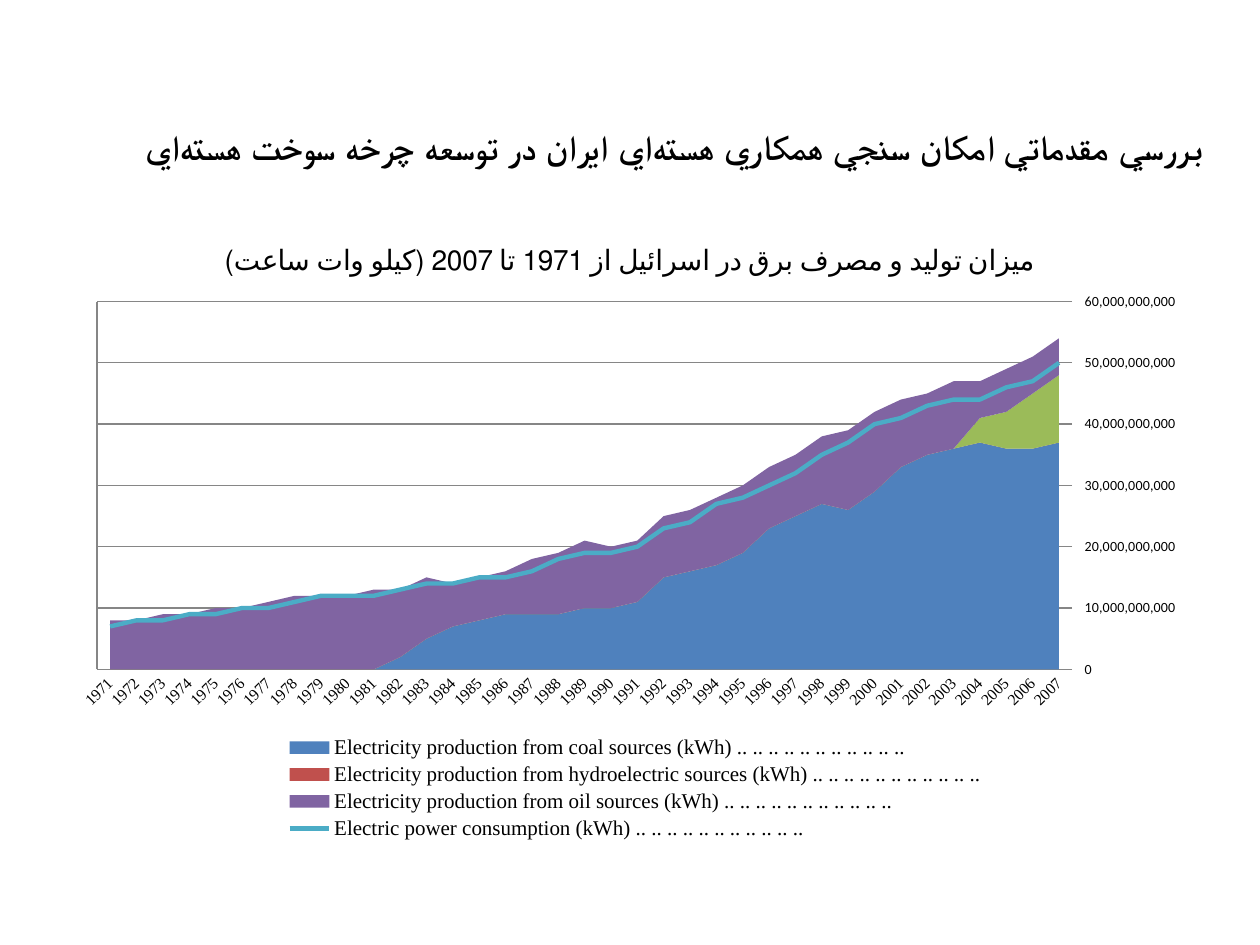
from pptx import Presentation
from pptx.chart.data import CategoryChartData
from pptx.dml.color import RGBColor
from pptx.enum.chart import XL_CHART_TYPE, XL_LEGEND_POSITION, XL_TICK_LABEL_POSITION, XL_TICK_MARK
from pptx.enum.text import MSO_ANCHOR, MSO_AUTO_SIZE, PP_ALIGN
from pptx.oxml import parse_xml
from pptx.oxml.ns import nsdecls
from pptx.util import Inches, Pt

AREA_STACKED = XL_CHART_TYPE.AREA_STACKED
LEGEND_BOTTOM = XL_LEGEND_POSITION.BOTTOM
LABELS_HIGH = XL_TICK_LABEL_POSITION.HIGH
NO_TICKS = XL_TICK_MARK.NONE
MIDDLE = MSO_ANCHOR.MIDDLE
NO_AUTOFIT = MSO_AUTO_SIZE.NONE
CENTER = PP_ALIGN.CENTER

TITLE_ONLY_LAYOUT = 5
BILLION = 10 ** 9
YEARS = [str(year) for year in range(1971, 2008)]
DOTS = " .." * 11
NON_JOINER = chr(0x200C)
NUCLEAR = f"هسته{NON_JOINER}اي"
SLIDE_TITLE = f"بررسي مقدماتي امکان سنجي همکاري {NUCLEAR} ايران در توسعه چرخه سوخت {NUCLEAR}"
CHART_TITLE = "ميزان توليد و مصرف برق در اسرائيل از 1971 تا 2007 (کيلو وات ساعت)"
UNNAMED_SERIES = 2

# Name, colour, billions of kWh per year; the last series is drawn as a line.
SERIES = [
    ("Electricity production from coal sources (kWh)" + DOTS, "4F81BD",
     [0] * 11 + [2, 5, 7, 8, 9, 9, 9, 10, 10, 11, 15, 16, 17, 19, 23, 25, 27, 26,
                 29, 33, 35, 36, 37, 36, 36, 37]),
    ("Electricity production from hydroelectric sources (kWh)" + DOTS, "C0504D", [0] * 37),
    ("Series 3", "9BBB59", [0] * 33 + [4, 6, 9, 11]),
    ("Electricity production from oil sources (kWh)" + DOTS, "8064A2",
     [8, 8, 9, 9, 10, 10, 11, 12, 12, 12, 13, 11, 10, 7, 7, 7, 9, 10, 11, 10, 10, 10,
      10, 11, 11, 10, 10, 11, 13, 13, 11, 10, 11, 6, 7, 6, 6]),
    ("Electric power consumption (kWh)" + DOTS, "4BACC6",
     [7, 8, 8, 9, 9, 10, 10, 11, 12, 12, 12, 13, 14, 14, 15, 15, 16, 18, 19, 19, 20,
      23, 24, 27, 28, 30, 32, 35, 37, 40, 41, 43, 44, 44, 46, 47, 50]),
]


def color(hex_string):
    return RGBColor.from_string(hex_string)


def chart_xml(tag, content=""):
    return parse_xml(f"<c:{tag} {nsdecls('c')}>{content}</c:{tag}>")


def manual_layout(x, y, width, height, inner=False):
    """Give a chart layout in fractions of the chart's size."""
    target = '<c:layoutTarget val="inner"/>' if inner else ""
    return chart_xml("layout", f'<c:manualLayout>{target}<c:xMode val="edge"/><c:yMode val="edge"/>'
                     f'<c:x val="{x}"/><c:y val="{y}"/><c:w val="{width}"/><c:h val="{height}"/>'
                     '</c:manualLayout>')


class SlideBuilder:
    font_name = "Calibri"
    label_font = "Times New Roman"
    text_color = "000000"
    grid_color = "868686"

    def __init__(self, slide):
        self.slide = slide

    def style_font(self, font, size, name=None, bold=False):
        font.name = name or self.font_name
        font.size = Pt(size)
        font.bold = bold
        font.color.rgb = color(self.text_color)

    def add_rtl_run(self, paragraph, text, size, bold=False):
        paragraph.alignment = CENTER
        paragraph._p.get_or_add_pPr().set("rtl", "1")
        run = paragraph.add_run()
        run.text = text
        self.style_font(run.font, size, bold=bold)

    def add_title(self, text, left, top, width, height):
        title = self.slide.shapes.title
        title.left, title.top = Inches(left), Inches(top)
        title.width, title.height = Inches(width), Inches(height)
        frame = title.text_frame
        frame.auto_size = NO_AUTOFIT
        frame.word_wrap = True
        frame.vertical_anchor = MIDDLE
        frame.margin_bottom = Inches(0.4)
        paragraph = frame.paragraphs[0]
        paragraph.line_spacing = 0.8
        self.add_rtl_run(paragraph, text, 20, bold=True)

    def add_chart(self, left, top, width, height):
        data = CategoryChartData(number_format="#,##0")
        data.categories = YEARS
        for name, _, billions in SERIES:
            data.add_series(name, [value * BILLION for value in billions])
        chart = self.slide.shapes.add_chart(
            AREA_STACKED, Inches(left), Inches(top), Inches(width), Inches(height), data).chart
        self.style_font(chart.font, 10)
        chart.has_title = True
        self.add_rtl_run(chart.chart_title.text_frame.paragraphs[0], CHART_TITLE, 16)
        self.style_series(chart)
        self.style_axes(chart)
        self.style_legend(chart)

    def style_series(self, chart):
        plot = chart.plots[0]
        plot.vary_by_categories = False
        *areas, consumption = plot.series
        for series, (_, fill, _) in zip(areas, SERIES):
            series.format.fill.solid()
            series.format.fill.fore_color.rgb = color(fill)
        self.move_to_line_chart(chart, consumption)
        line_series = chart.plots[1].series[0]
        line_series.smooth = False
        line_series.format.line.color.rgb = color(SERIES[-1][1])
        line_series.format.line.width = Pt(2.5)

    def move_to_line_chart(self, chart, series):
        area_chart = chart.element.xpath("//c:areaChart")[0]
        line_chart = chart_xml("lineChart", '<c:grouping val="standard"/><c:varyColors val="0"/>'
                               '<c:marker val="1"/>')
        line_chart.insert(2, series._element)
        series._element.xpath("c:cat")[0].addprevious(
            chart_xml("marker", '<c:symbol val="none"/>'))
        for axis_id in area_chart.xpath("c:axId"):
            line_chart.append(chart_xml("axId"))
            line_chart[-1].set("val", axis_id.get("val"))
        area_chart.addnext(line_chart)

    def style_axes(self, chart):
        years, energy = chart.category_axis, chart.value_axis
        for axis, size, font_name in ((years, 9, self.label_font), (energy, 8, self.font_name)):
            axis.major_tick_mark = axis.minor_tick_mark = NO_TICKS
            axis.format.line.color.rgb = color(self.grid_color)
            self.style_font(axis.tick_labels.font, size, font_name)
        years.has_major_gridlines = False
        years._element.xpath("c:txPr/a:bodyPr")[0].set("rot", "-2700000")
        energy.minimum_scale, energy.maximum_scale = 0, 60 * BILLION
        energy.major_unit = 10 * BILLION
        energy.tick_label_position = LABELS_HIGH
        energy.tick_labels.number_format = "#,##0"
        energy.tick_labels.number_format_is_linked = False
        energy.major_gridlines.format.line.color.rgb = color(self.grid_color)
        for crossing in energy._element.xpath("c:crossBetween"):
            crossing.set("val", "between")
        plot_area = chart.element.xpath("//c:plotArea")[0]
        for layout in plot_area.xpath("c:layout"):
            plot_area.remove(layout)
        plot_area.insert(0, manual_layout(0.03, 0.13, 0.86, 0.59, inner=True))

    def style_legend(self, chart):
        chart.has_legend = True
        legend = chart.legend
        legend.position = LEGEND_BOTTOM
        legend.include_in_layout = False
        self.style_font(legend.font, 12, self.label_font)
        element = legend._element
        for layout in element.xpath("c:layout"):
            element.remove(layout)
        hidden_entry = chart_xml("legendEntry", f'<c:idx val="{UNNAMED_SERIES}"/><c:delete val="1"/>')
        element.insert(1, hidden_entry)
        element.insert(2, manual_layout(0.19, 0.82, 0.63, 0.18))


def main():
    presentation = Presentation()
    presentation.slide_width, presentation.slide_height = Inches(10), Inches(7.5)
    slide = presentation.slides.add_slide(presentation.slide_layouts[TITLE_ONLY_LAYOUT])
    builder = SlideBuilder(slide)
    builder.add_chart(0.5, 1.75, 9, 4.95)
    builder.add_title(SLIDE_TITLE, 0.7, 1.09, 9.3, 0.55)
    presentation.save("out.pptx")


if __name__ == "__main__":
    main()
